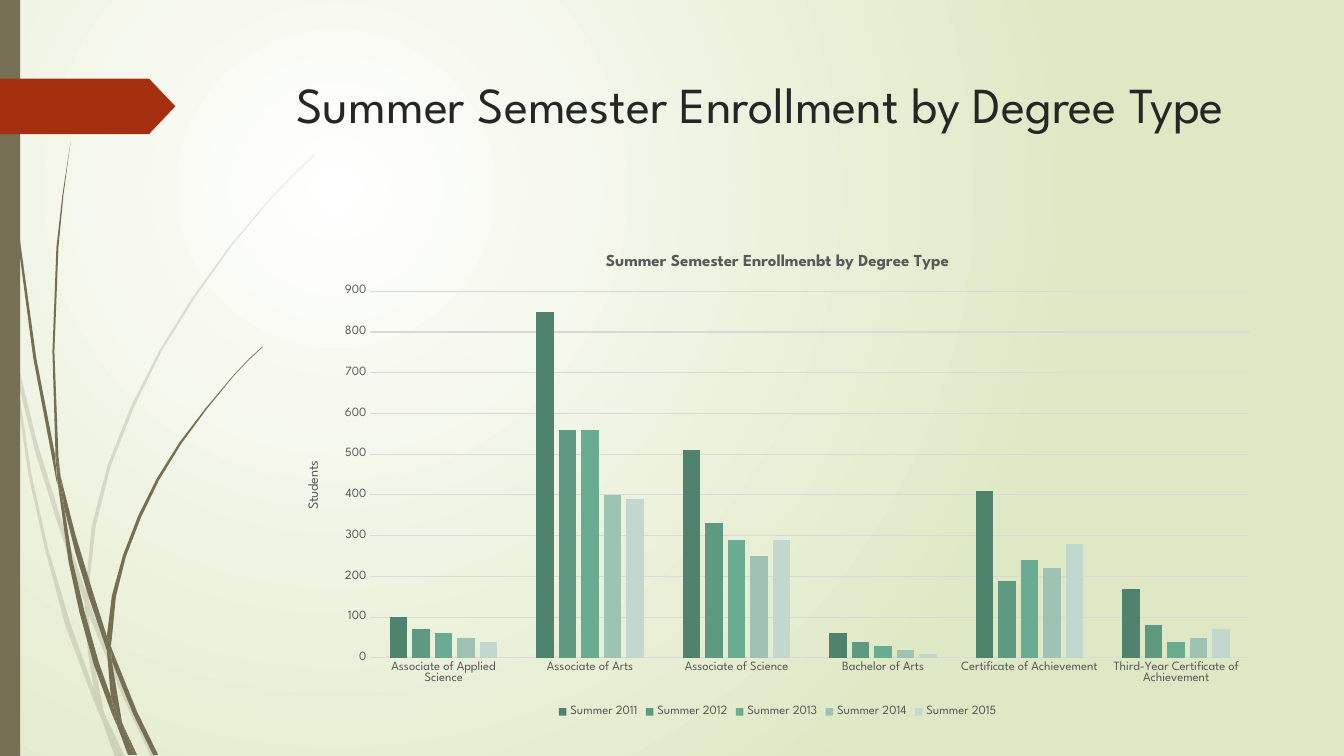
from lxml import etree
from pptx import Presentation, util as u
from pptx.chart.data import CategoryChartData
from pptx.dml.color import RGBColor
from pptx.enum import chart as ch, shapes, text
from pptx.oxml import ns

OLIVE = RGBColor(0x76, 0x6F, 0x54)
RUST = RGBColor(0xA5, 0x30, 0x10)
WHITE = RGBColor(0xFF, 0xFF, 0xFF)
PALE_GREEN = RGBColor(0xDF, 0xE8, 0xC4)
INK = RGBColor(0x26, 0x26, 0x26)
GREY = RGBColor(0x59, 0x59, 0x59)
RULE = RGBColor(0xD9, 0xD9, 0xD9)
GREENS = [RGBColor.from_string(c) for c in ("50836E", "5E9981", "6AAC91", "9EC3B2", "C2D7CD")]
FONT = "League Spartan"
SLIDE_WIDTH, SLIDE_HEIGHT = u.Emu(12192000), u.Inches(7.5)
LEFT, WIDTH = 2.84, 9.75

DEGREES = ["Associate of Applied Science", "Associate of Arts", "Associate of Science",
           "Bachelor of Arts", "Certificate of Achievement",
           "Third-Year Certificate of Achievement"]
ENROLLMENT = {
    "Summer 2011": (100, 850, 510, 60, 410, 170),
    "Summer 2012": (70, 560, 330, 40, 190, 80),
    "Summer 2013": (60, 560, 290, 30, 240, 40),
    "Summer 2014": (50, 400, 250, 20, 220, 50),
    "Summer 2015": (40, 390, 290, 10, 280, 70),
}

PALE_BLADES = [
    [(0.11, 3.5), (0.09, 3.22), (0, 2.82), (0, 2.99), (0.1, 3.44)],
    [(0.58, 5.22), (0.84, 5.99), (0.85, 5.86), (0.62, 5.2), (0.36, 4.36), (0.14, 3.45),
     (0.17, 3.76), (0.36, 4.52)],
    [(0.92, 6.07), (0.88, 5.96), (0.88, 6.1), (1.23, 6.94), (1.5, 7.51), (1.55, 7.51),
     (1.27, 6.92)],
    [(1.19, 7.51), (1.24, 7.51), (1.05, 7.11)],
    [(0.93, 6.83), (0.7, 6.19), (0.48, 5.45), (0.31, 4.69), (0.17, 3.76), (0.11, 3.5),
     (0.28, 4.7), (0.45, 5.46), (0.65, 6.21), (0.92, 6.93), (1.01, 7.14), (0.99, 7.07)],
    [(0.84, 5.99), (0.87, 6.46), (0.93, 6.83), (0.96, 6.92), (1.05, 7.11), (1.03, 7.06),
     (0.91, 6.46), (0.88, 6.1), (0.88, 6.08)],
    [(0.88, 5.84), (0.95, 5.22), (1.1, 4.62), (1.33, 4.04), (1.6, 3.49), (1.93, 2.96),
     (2.29, 2.45), (2.68, 1.98), (2.9, 1.75), (3.12, 1.54), (3.12, 1.53), (2.89, 1.75),
     (2.68, 1.97), (2.28, 2.44), (1.91, 2.95), (1.58, 3.48), (1.3, 4.03), (1.07, 4.61),
     (0.91, 5.22), (0.85, 5.84), (0.85, 5.86), (0.88, 5.96)],
    [(1.01, 7.14), (1.14, 7.51), (1.19, 7.51)],
    [(0.88, 6.08), (0.88, 6.1), (0.88, 5.96), (0.85, 5.86), (0.84, 5.99)],
    [(0.96, 6.92), (0.93, 6.83), (0.99, 7.07), (1.01, 7.14), (1.19, 7.51), (1.05, 7.11)],
]
DARK_BLADES = [
    [(0.07, 1.1), (0.17, 2.33), (0.33, 3.55), (0.56, 4.77), (0.57, 4.81), (0.55, 4.57),
     (0.55, 4.53), (0.36, 3.55), (0.19, 2.32), (0.08, 1.09), (0.05, 0.48), (0.04, 0),
     (0.03, 0), (0.04, 0.48)],
    [(0.88, 5.92), (1.06, 6.45), (1.06, 6.33), (1.06, 6.31), (0.93, 5.9), (0.75, 5.31),
     (0.6, 4.72), (0.64, 5.05), (0.75, 5.49)],
    [(1.13, 6.49), (1.1, 6.41), (1.11, 6.56), (1.32, 7.08), (1.52, 7.49), (1.57, 7.49),
     (1.36, 7.06)],
    [(1.1, 6.91), (0.98, 6.57), (0.84, 6.07), (0.72, 5.56), (0.64, 5.05), (0.57, 4.77),
     (0.68, 5.57), (0.79, 6.08), (0.93, 6.59), (1.11, 7.08), (1.17, 7.22), (1.16, 7.17)],
    [(0.6, 4.72), (0.58, 4.53), (0.54, 3.49), (0.58, 2.45), (0.63, 1.93), (0.7, 1.41),
     (0.62, 1.93), (0.56, 2.45), (0.52, 3.49), (0.55, 4.49)],
    [(1.33, 7.49), (1.36, 7.49), (1.22, 7.19)],
    [(0.57, 4.77), (0.64, 5.05), (0.6, 4.72), (0.55, 4.49), (0.55, 4.53)],
    [(1.11, 6.33), (1.15, 5.92), (1.25, 5.52), (1.4, 5.13), (1.58, 4.76), (1.8, 4.4),
     (2.05, 4.06), (2.31, 3.74), (2.45, 3.59), (2.61, 3.44), (2.6, 3.44), (2.45, 3.58),
     (2.31, 3.73), (2.04, 4.05), (1.78, 4.39), (1.56, 4.74), (1.37, 5.12), (1.22, 5.51),
     (1.11, 5.91), (1.06, 6.31), (1.1, 6.41)],
    [(1.17, 7.22), (1.27, 7.49), (1.31, 7.49)],
    [(1.06, 6.45), (1.1, 6.91), (1.16, 7.06), (1.22, 7.19), (1.21, 7.16), (1.11, 6.56),
     (1.09, 6.51)],
    [(1.06, 6.45), (1.09, 6.51), (1.11, 6.56), (1.1, 6.41), (1.06, 6.31), (1.06, 6.33)],
    [(1.16, 7.06), (1.1, 6.91), (1.16, 7.17), (1.17, 7.22), (1.3, 7.49), (1.33, 7.49),
     (1.22, 7.19)],
]
TAG = [(1, 0.5), (0.85, 0), (0, 0), (0, 1), (0.85, 1)]


def inches(box):
    return [u.Inches(v) for v in box]


def paint(sp, color, alpha=None):
    sp.shadow.inherit = False
    sp.fill.solid()
    sp.fill.fore_color.rgb = color
    sp.line.fill.background()
    if alpha:
        fill = sp._element.spPr.find(ns.qn("a:solidFill"))
        etree.SubElement(fill[0], ns.qn("a:alpha"), val=str(alpha * 1000))


def add_outline(parent, box, points, color, alpha=None):
    left, top, width, height = box
    start, *rest = [inches((left + x * width, top + y * height)) for x, y in points]
    builder = parent.shapes.build_freeform(*start)
    builder.add_line_segments(rest)
    paint(builder.convert_to_shape(), color, alpha)


def style(font, size, color, bold=False):
    font.name, font.size, font.bold = FONT, u.Pt(size), bold
    font.color.rgb = color


def add_background(s):
    fill = s.background.fill
    fill.gradient()
    for stop, color in zip(fill.gradient_stops, (WHITE, PALE_GREEN)):
        stop.color.rgb = color
    grad = next(s._element.iter(ns.qn("a:gradFill")))
    grad.remove(grad.find(ns.qn("a:lin")))
    circle = etree.Element(ns.qn("a:path"), path="circle")
    etree.SubElement(circle, ns.qn("a:fillToRect"), l="50000", t="50000", r="100000", b="100000")
    grad.find(ns.qn("a:gsLst")).addnext(circle)


def add_side_decor(s, box):
    left, top, width, height = box
    for blades, alpha in ((PALE_BLADES, 20), (DARK_BLADES, None)):
        group = s.shapes.add_group_shape()
        for blade in blades:
            add_outline(group, (left, top, 1, 1), blade, OLIVE, alpha)
    bar = s.shapes.add_shape(shapes.MSO_SHAPE.RECTANGLE, *inches((left, top, 0.2, height)))
    paint(bar, OLIVE)
    add_outline(s, (left, top + 0.78, width, 0.55), TAG, RUST)


def add_title(s, box):
    sp = s.shapes.title
    sp.left, sp.top, sp.width, sp.height = inches(box)
    tf = sp.text_frame
    tf.text = "Summer Semester Enrollment by Degree Type"
    tf.word_wrap = True
    tf.auto_size = text.MSO_AUTO_SIZE.NONE
    tf.vertical_anchor = text.MSO_ANCHOR.TOP
    p = tf.paragraphs[0]
    p.alignment = text.PP_ALIGN.LEFT
    style(p.runs[0].font, 36, INK)


def add_enrollment_chart(s, box):
    data = CategoryChartData()
    data.categories = DEGREES
    for name, values in ENROLLMENT.items():
        data.add_series(name, values)
    chart = s.shapes.add_chart(ch.XL_CHART_TYPE.COLUMN_CLUSTERED, *inches(box), data).chart
    style(chart.font, 10, GREY)

    tf = chart.chart_title.text_frame
    tf.text = "Summer Semester Enrollmenbt by Degree Type"
    style(tf.paragraphs[0].runs[0].font, 12, GREY, True)
    chart.chart_title.include_in_layout = False

    chart.has_legend = True
    chart.legend.position = ch.XL_LEGEND_POSITION.BOTTOM
    chart.legend.include_in_layout = False
    style(chart.legend.font, 9, GREY)

    for axis in (chart.category_axis, chart.value_axis):
        axis.major_tick_mark = axis.minor_tick_mark = ch.XL_TICK_MARK.NONE
        style(axis.tick_labels.font, 9, GREY)
    values = chart.value_axis
    values.minimum_scale, values.maximum_scale, values.major_unit = 0, 900, 100
    values.format.line.fill.background()
    tf = values.axis_title.text_frame
    tf.text = "Students"
    style(tf.paragraphs[0].runs[0].font, 10, GREY)
    for line in (chart.category_axis.format.line, values.major_gridlines.format.line):
        line.color.rgb = RULE
        line.width = u.Pt(0.75)

    plot = chart.plots[0]
    plot.vary_by_categories = False
    plot.gap_width, plot.overlap = 219, -27
    for series, color in zip(plot.series, GREENS):
        series.format.fill.solid()
        series.format.fill.fore_color.rgb = color


def main():
    prs = Presentation()
    prs.slide_width, prs.slide_height = SLIDE_WIDTH, SLIDE_HEIGHT
    s = prs.slides.add_slide(prs.slide_layouts[5])
    add_background(s)
    add_side_decor(s, (0, 0, 1.74, 7.5))
    add_title(s, (LEFT, 0.68, WIDTH, 1.4))
    add_enrollment_chart(s, (LEFT, 2.33, WIDTH, 4.83))
    prs.save("out.pptx")


if __name__ == "__main__":
    main()
